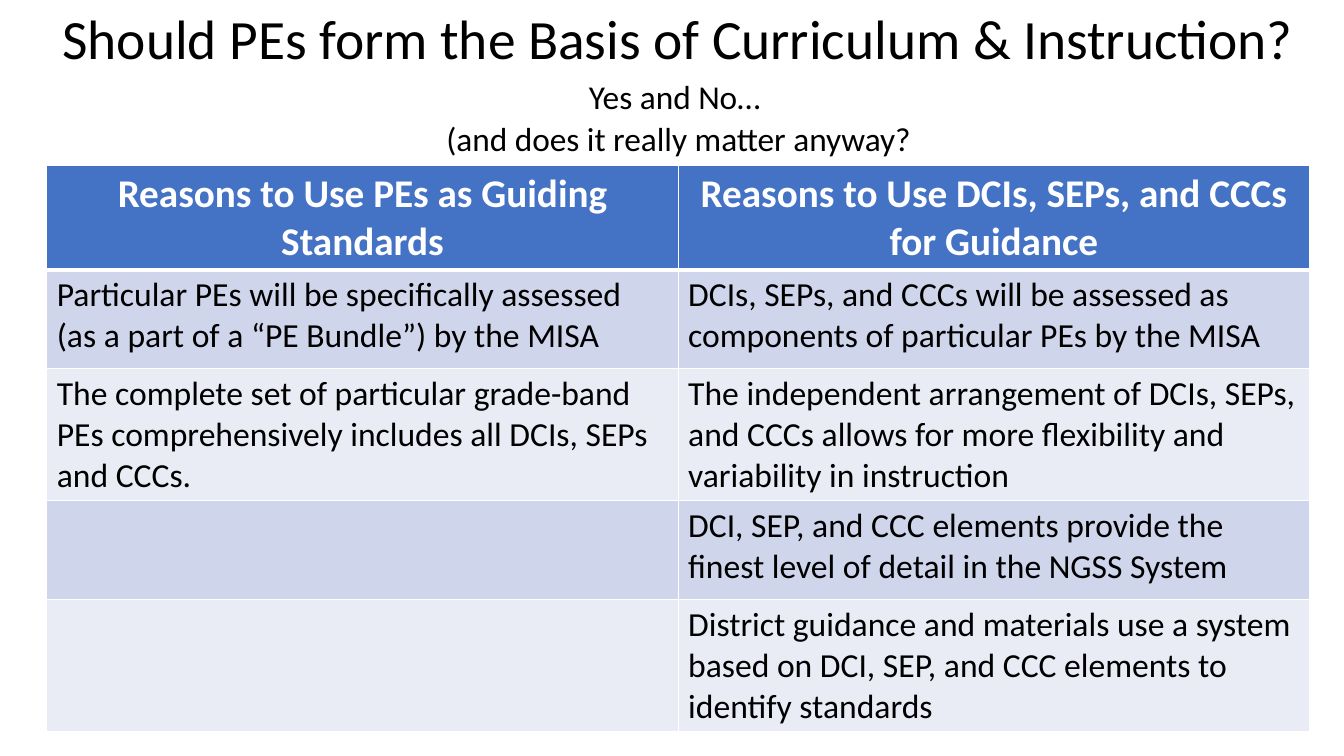
import pptx
import pptx.dml.color
import pptx.enum.text
import pptx.oxml
import pptx.oxml.ns
import pptx.util

Pt = pptx.util.Pt
RGBColor = pptx.dml.color.RGBColor
CENTER = pptx.enum.text.PP_ALIGN.CENTER
LEFT = pptx.enum.text.PP_ALIGN.LEFT
ANCHOR = pptx.enum.text.MSO_ANCHOR

BLACK = RGBColor(0x00, 0x00, 0x00)
WHITE = RGBColor(0xFF, 0xFF, 0xFF)
HEADER_BLUE = RGBColor(0x44, 0x72, 0xC4)
BAND_DARK = RGBColor(0xCF, 0xD5, 0xEA)
BAND_LIGHT = RGBColor(0xE9, 0xEB, 0xF5)

TITLE = "Should PEs form the Basis of Curriculum & Instruction?"
ANSWER = ["Yes and No… ", "(and does it really matter anyway?"]
REASONS = [
    ("Reasons to Use PEs as Guiding Standards",
     "Reasons to Use DCIs, SEPs, and CCCs for Guidance"),
    ("Particular PEs will be specifically assessed (as a part of a “PE Bundle”) by the MISA",
     "DCIs, SEPs, and CCCs will be assessed as components of particular PEs by the MISA"),
    ("The complete set of particular grade-band PEs comprehensively includes all DCIs, SEPs "
     "and CCCs.",
     "The independent arrangement of DCIs, SEPs, and CCCs allows for more flexibility and "
     "variability in instruction"),
    ("", "DCI, SEP, and CCC elements provide the finest level of detail in the NGSS System"),
    ("", "District guidance and materials use a system based on DCI, SEP, and CCC elements "
         "to identify standards"),
]
ROW_HEIGHTS = [65.5, 70.6, 94.3, 70.6, 94.3]
COLUMN_WIDTH = 451

TITLE_FORMAT = {"alignment": CENTER, "line_spacing": 0.9}
ANSWER_FORMAT = {"alignment": CENTER, "line_spacing": 0.7, "space_before": Pt(10)}
HEADER_FONT = {"size": Pt(28), "bold": True}
REASON_FONT = {"size": Pt(24), "bold": False}


def apply_format(target, values):
    for name, value in values.items():
        setattr(target, name, value)


def write_lines(frame, lines, line_format, font_format, color):
    for index, line in enumerate(lines):
        paragraph = frame.paragraphs[0] if index == 0 else frame.add_paragraph()
        apply_format(paragraph, line_format)
        # An empty cell still takes its font from the paragraph
        font = paragraph.font
        if line:
            run = paragraph.add_run()
            run.text = line
            font = run.font
        apply_format(font, {"name": "Calibri", **font_format})
        font.color.rgb = color


def add_heading(slide, box, lines, line_format, size, anchor):
    frame = slide.shapes.add_textbox(*map(Pt, box)).text_frame
    apply_format(frame, {"word_wrap": True, "vertical_anchor": anchor})
    write_lines(frame, lines, line_format, {"size": Pt(size)}, BLACK)


def set_borders(cell, widths):
    properties = cell._tc.get_or_add_tcPr()
    for index, (side, width) in enumerate(widths.items()):
        border = pptx.oxml.parse_xml(
            f'<a:{side} {pptx.oxml.ns.nsdecls("a")} w="{Pt(width)}">'
            f'<a:solidFill><a:srgbClr val="{WHITE}"/></a:solidFill></a:{side}>')
        properties.insert(index, border)


def add_reasons_table(slide, left, top):
    table = slide.shapes.add_table(
        len(REASONS), 2, Pt(left), Pt(top),
        Pt(2 * COLUMN_WIDTH), Pt(sum(ROW_HEIGHTS))).table
    for column in table.columns:
        column.width = Pt(COLUMN_WIDTH)

    for row_index, (reasons, height) in enumerate(zip(REASONS, ROW_HEIGHTS)):
        table.rows[row_index].height = Pt(height)
        is_header = row_index == 0
        band = BAND_DARK if row_index % 2 else BAND_LIGHT
        for column_index, reason in enumerate(reasons):
            cell = table.cell(row_index, column_index)
            cell.fill.solid()
            cell.fill.fore_color.rgb = HEADER_BLUE if is_header else band
            write_lines(cell.text_frame, [reason],
                        {"alignment": CENTER if is_header else LEFT},
                        HEADER_FONT if is_header else REASON_FONT,
                        WHITE if is_header else BLACK)
            # The rule under the header is heavier
            set_borders(cell, {"lnL": 1, "lnR": 1,
                               "lnT": 3 if row_index == 1 else 1,
                               "lnB": 3 if is_header else 1})


def main():
    deck = pptx.Presentation()
    apply_format(deck, {"slide_width": Pt(960), "slide_height": Pt(540)})
    slide = deck.slides.add_slide(deck.slide_layouts[6])

    # Question and short answer
    add_heading(slide, (33.4, 0, 902, 59), [TITLE], TITLE_FORMAT, 39.6, ANCHOR.MIDDLE)
    add_heading(slide, (280, 59, 409, 59), ANSWER, ANSWER_FORMAT, 23.8, ANCHOR.TOP)

    # Reasons on both sides
    add_reasons_table(slide, 33.4, 118.3)

    deck.save("out.pptx")


if __name__ == "__main__":
    main()
